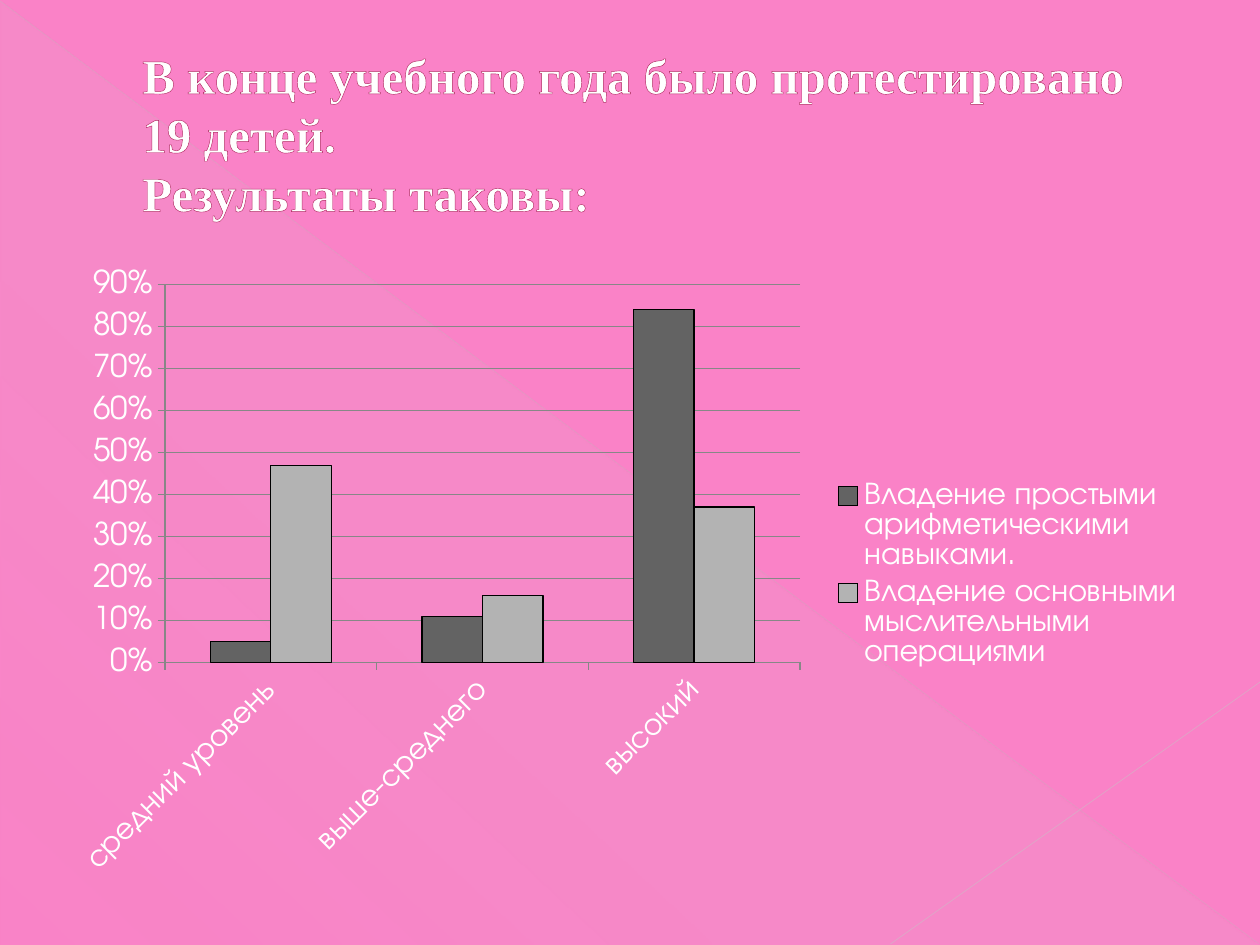
from dataclasses import dataclass

from lxml import etree
from pptx import Presentation
from pptx import util as u
from pptx.chart import data as chart_data
from pptx.dml import color
from pptx.enum import chart as charts, shapes, text
from pptx.oxml import ns, parse_xml


@dataclass(frozen=True)
class Theme:
    background: str = "FA82C7"
    white: str = "FFFFFF"
    title_outline: str = "B12761"
    shade: str = "D2D2D2"
    diagonal: str = "BFBFBF"
    corner: str = "C6C6C6"
    grid: str = "878787"
    bar_edge: str = "000000"
    bars: tuple = ("636363", "B3B3B3")
    title_font: str = "Times New Roman"
    chart_font: str = "TeX Gyre Adventor"
    title_size: int = 28
    chart_size: int = 18


THEME = Theme()
TITLE = ("В конце учебного года было протестировано 19 детей.", "Результаты таковы:")
LEVELS = ("средний уровень", "выше-среднего", "высокий")
SKILLS = {
    "Владение простыми арифметическими навыками.": (0.05, 0.11, 0.84),
    "Владение основными мыслительными операциями": (0.47, 0.16, 0.37),
}


def rgb(value):
    return color.RGBColor.from_string(value)


def format_font(font, name, size, ink, bold=False):
    font.name, font.size, font.bold = name, u.Pt(size), bold
    font.color.rgb = rgb(ink)


def format_line(line, ink, width):
    line.color.rgb = rgb(ink)
    line.width = u.Pt(width)


def add_shade(slide, left, top, width, height):
    """Add the right triangle that fades over the background."""
    triangle = slide.shapes.add_shape(
        shapes.MSO_SHAPE.RIGHT_TRIANGLE, left, top, width, height)
    triangle.shadow.inherit = False
    triangle.line.fill.background()
    stops = "".join(
        f'<a:gs pos="{position * 1000}"><a:srgbClr val="{THEME.shade}">'
        f'<a:alpha val="{alpha * 1000}"/></a:srgbClr></a:gs>'
        for position, alpha in ((0, 10), (70, 8), (100, 1)))
    gradient = parse_xml(
        f'<a:gradFill {ns.nsdecls("a")} rotWithShape="1"><a:gsLst>{stops}</a:gsLst>'
        f'<a:lin ang="{133 * 60000}" scaled="0"/></a:gradFill>')
    triangle._element.spPr.find(ns.qn("a:prstGeom")).addnext(gradient)


def add_faint_line(slide, start, end, ink, width, alpha):
    line = slide.shapes.add_connector(shapes.MSO_CONNECTOR.STRAIGHT, *start, *end)
    format_line(line.line, ink, width)
    properties = line._element.spPr
    tint = properties.find(".//" + ns.qn("a:srgbClr"))
    etree.SubElement(tint, ns.qn("a:alpha"), val=str(alpha * 1000))
    etree.SubElement(properties, ns.qn("a:effectLst"))


def add_text(slide, lines, left, top, width, height, *, font, size, ink,
             outline, indent, bold=False):
    """Add one paragraph, with a line break between lines."""
    box = slide.shapes.add_textbox(left, top, width, height)
    frame = box.text_frame
    frame.word_wrap = True
    frame.vertical_anchor = text.MSO_ANCHOR.MIDDLE
    para = frame.paragraphs[0]
    para._p.get_or_add_pPr().set("marL", str(indent))
    for number, words in enumerate(lines):
        if number:
            para.add_line_break()
        span = para.add_run()
        span.text = words
        format_font(span.font, font, size, ink, bold)
        span._r.get_or_add_rPr().insert(0, parse_xml(
            f'<a:ln {ns.nsdecls("a")} w="{u.Pt(0.5)}"><a:solidFill>'
            f'<a:srgbClr val="{outline}"/></a:solidFill></a:ln>'))


def place_plot(chart, **fractions):
    """Fix the inner plot area as fractions of the chart."""
    plot_area = chart._chartSpace.chart.plotArea
    for old in plot_area.findall(ns.qn("c:layout")):
        plot_area.remove(old)
    values = "".join(f'<c:{key} val="{value}"/>' for key, value in fractions.items())
    plot_area.insert(0, parse_xml(
        f'<c:layout {ns.nsdecls("c")}><c:manualLayout><c:layoutTarget val="inner"/>'
        f'<c:xMode val="edge"/><c:yMode val="edge"/>{values}'
        '</c:manualLayout></c:layout>'))


def format_axis(axis):
    axis.major_tick_mark = charts.XL_TICK_MARK.OUTSIDE
    axis.minor_tick_mark = charts.XL_TICK_MARK.NONE
    format_line(axis.format.line, THEME.grid, 0.75)
    format_font(axis.tick_labels.font, THEME.chart_font, THEME.chart_size, THEME.white)


def add_results_chart(slide, left, top, width, height):
    results = chart_data.CategoryChartData(number_format="0%")
    results.categories = LEVELS
    for name, values in SKILLS.items():
        results.add_series(name, values)
    chart = slide.shapes.add_chart(
        charts.XL_CHART_TYPE.COLUMN_CLUSTERED, left, top, width, height, results).chart
    chart.has_title = False
    format_font(chart.font, THEME.chart_font, THEME.chart_size, THEME.white)
    chart.has_legend = True
    chart.legend.position = charts.XL_LEGEND_POSITION.RIGHT
    chart.legend.include_in_layout = False
    format_font(chart.legend.font, THEME.chart_font, THEME.chart_size, THEME.white)

    for axis in (chart.category_axis, chart.value_axis):
        format_axis(axis)
    labels = chart.category_axis._element.find(ns.qn("c:txPr"))
    labels.find(ns.qn("a:bodyPr")).set("rot", str(-45 * 60000))
    scale = chart.value_axis
    scale.minimum_scale, scale.maximum_scale, scale.major_unit = 0, 0.9, 0.1
    scale.tick_labels.number_format = "0%"
    scale.tick_labels.number_format_is_linked = False
    scale.has_major_gridlines = True
    format_line(scale.major_gridlines.format.line, THEME.grid, 0.75)

    plot = chart.plots[0]
    plot.gap_width, plot.overlap, plot.vary_by_categories = 150, 0, False
    for series, ink in zip(plot.series, THEME.bars):
        series.format.fill.solid()
        series.format.fill.fore_color.rgb = rgb(ink)
        format_line(series.format.line, THEME.bar_edge, 0.75)
    place_plot(chart, x=0.09, y=0.04, w=0.56, h=0.6)


def main():
    deck = Presentation()
    deck.slide_width, deck.slide_height = u.Cm(25.4), u.Cm(19.05)
    slide = deck.slides.add_slide(deck.slide_layouts[6])
    slide.background.fill.solid()
    slide.background.fill.fore_color.rgb = rgb(THEME.background)

    add_shade(slide, u.Cm(0.02), u.Cm(0.04), u.Cm(25.35), u.Cm(19))
    add_faint_line(slide, (u.Cm(0), u.Cm(0.02)), (u.Cm(25.38), u.Cm(19.03)),
                   THEME.diagonal, 0.39, 35)
    add_faint_line(slide, (u.Cm(25.4), u.Cm(13.75)), (u.Cm(17.95), u.Cm(19.03)),
                   THEME.corner, 0.47, 45)
    add_text(slide, TITLE, u.Cm(1.27), u.Cm(0.74), u.Cm(22.86), u.Cm(3.89),
             font=THEME.title_font, size=THEME.title_size, ink=THEME.white,
             outline=THEME.title_outline, indent=u.Cm(1.35), bold=True)
    add_results_chart(slide, u.Cm(1.27), u.Cm(5.23), u.Cm(22.86), u.Cm(12.7))
    deck.save("out.pptx")


if __name__ == "__main__":
    main()
